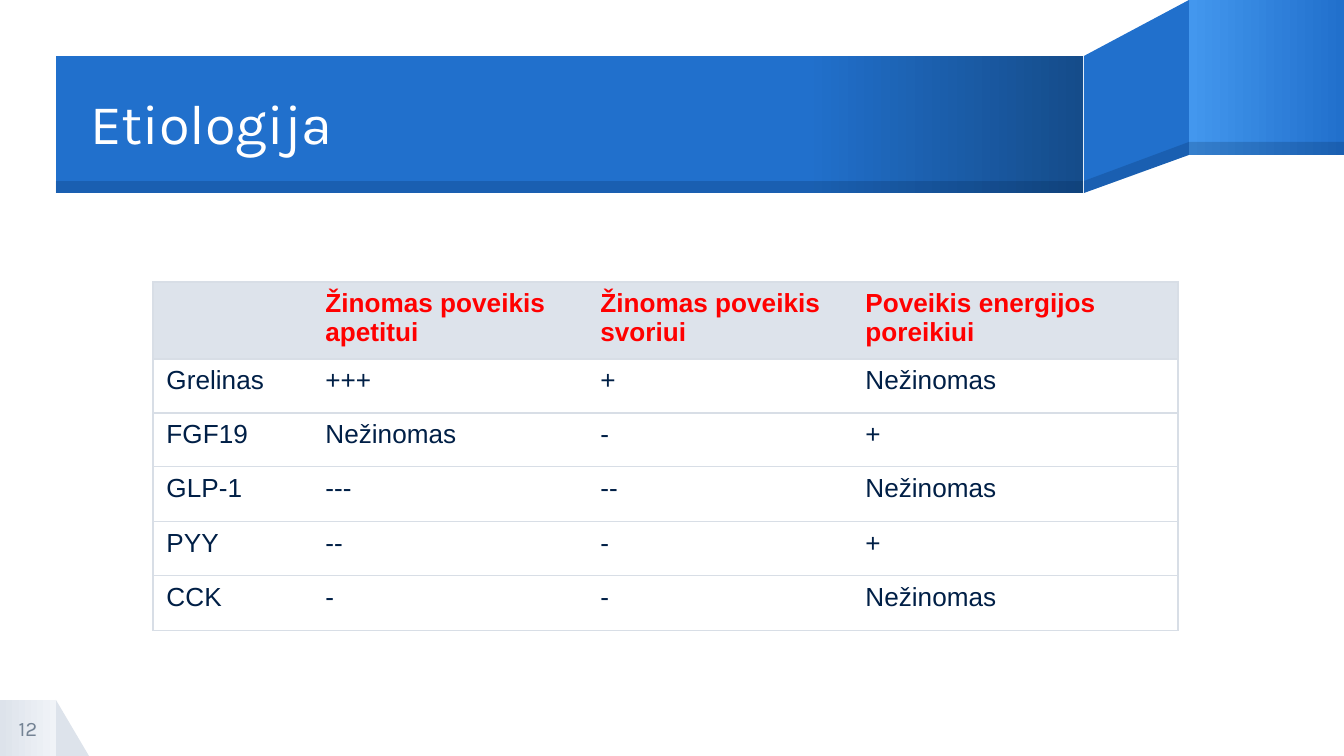
import pptx
import pptx.dml.color
import pptx.enum.shapes
import pptx.enum.text
import pptx.oxml
import pptx.oxml.ns
import pptx.util

EMU_PER_PX = 914400 / 134.4
COLORS = {
    "blue": "2170CC", "light_blue": "4397EE", "dark_blue": "154C8A",
    "navy": "001F46", "mist": "DDE3EB", "pale": "F0F3F7", "border": "D8DEE6",
    "grey": "748394", "red": "FF0000", "white": "FFFFFF",
}
SHAPES = pptx.enum.shapes.MSO_SHAPE
ALIGN = pptx.enum.text.PP_ALIGN
MIDDLE = pptx.enum.text.MSO_ANCHOR.MIDDLE
NAMESPACE = pptx.oxml.ns.nsdecls("a")


def px(length):
    return pptx.util.Emu(round(length * EMU_PER_PX))


def rgb(name):
    return pptx.dml.color.RGBColor.from_string(COLORS[name])


class SlideBuilder:
    def __init__(self, slide):
        self.slide = slide

    def paint(self, shape, fill, alpha=None):
        """Fill with a colour name, or with a list of (percent, colour name) stops."""
        shape.shadow.inherit = False
        shape.line.fill.background()
        if isinstance(fill, list):
            shape.fill.gradient()
            shape.fill.gradient_angle = 0
            stop_list = shape.element.spPr.find(".//" + pptx.oxml.ns.qn("a:gsLst"))
            for stop in list(stop_list):
                stop_list.remove(stop)
            for percent, name in fill:
                stop_list.append(pptx.oxml.parse_xml(
                    f'<a:gs {NAMESPACE} pos="{percent * 1000}">'
                    f'<a:srgbClr val="{COLORS[name]}"/></a:gs>'))
            return
        shape.fill.solid()
        shape.fill.fore_color.rgb = rgb(fill)
        if alpha is not None:
            color = shape.element.spPr.find(".//" + pptx.oxml.ns.qn("a:srgbClr"))
            color.append(pptx.oxml.parse_xml(
                f'<a:alpha {NAMESPACE} val="{alpha * 1000}"/>'))

    def shape(self, kind, box, fill, alpha=None):
        shape = self.slide.shapes.add_shape(kind, *map(px, box))
        self.paint(shape, fill, alpha)

    def polygon(self, points, fill, alpha=None):
        outline = self.slide.shapes.build_freeform(*points[0], scale=EMU_PER_PX)
        outline.add_line_segments(points[1:], close=True)
        self.paint(outline.convert_to_shape(), fill, alpha)

    def set_text(self, frame, text, size, font, color, bold=False, **paragraph_format):
        paragraph = frame.paragraphs[0]
        paragraph.text = text
        for name, value in paragraph_format.items():
            setattr(paragraph, name, value)
        values = {"size": pptx.util.Pt(size), "name": font, "bold": bold}
        for name, value in values.items():
            setattr(paragraph.font, name, value)
        paragraph.font.color.rgb = rgb(color)

    def format_frame(self, frame):
        values = {"word_wrap": True, "vertical_anchor": MIDDLE,
                  "auto_size": pptx.enum.text.MSO_AUTO_SIZE.NONE,
                  "margin_left": 0, "margin_right": 0,
                  "margin_top": 0, "margin_bottom": 0}
        for name, value in values.items():
            setattr(frame, name, value)

    def title(self, box, text):
        title = self.slide.shapes.title
        for name, value in zip(("left", "top", "width", "height"), box):
            setattr(title, name, px(value))
        title.element.getparent().append(title.element)  # in front of the ribbon
        self.format_frame(title.text_frame)
        self.set_text(title.text_frame, text, 30, "Karla", "white",
                      alignment=ALIGN.LEFT, line_spacing=0.9)

    def text(self, box, text, size, color):
        frame = self.slide.shapes.add_textbox(*map(px, box)).text_frame
        self.format_frame(frame)
        self.set_text(frame, text, size, "Karla", color, alignment=ALIGN.CENTER)

    def border(self, cell, side, visible):
        fill = (f'<a:solidFill><a:srgbClr val="{COLORS["border"]}"/></a:solidFill>'
                if visible else "<a:noFill/>")
        cell._tc.get_or_add_tcPr().append(pptx.oxml.parse_xml(
            f'<a:ln{side} {NAMESPACE} w="9525">{fill}</a:ln{side}>'))

    def table(self, left, top, widths, heights, rows):
        frame = self.slide.shapes.add_table(
            len(rows), len(widths), px(left), px(top), px(sum(widths)), px(sum(heights)))
        table = frame.table
        table.first_row = table.horz_banding = False
        for column, width in zip(table.columns, widths):
            column.width = px(width)
        for row, height in zip(table.rows, heights):
            row.height = px(height)
        for row_index, row in enumerate(rows):
            header = row_index == 0
            for column_index, text in enumerate(row):
                cell = table.cell(row_index, column_index)
                self.border(cell, "L", column_index == 0)
                self.border(cell, "R", column_index == len(row) - 1)
                self.border(cell, "T", True)
                self.border(cell, "B", True)
                if header:
                    cell.fill.solid()
                    cell.fill.fore_color.rgb = rgb("mist")
                else:
                    cell.fill.background()
                self.set_text(cell.text_frame, text, 14, "Arial",
                              "red" if header else "navy", bold=header)


def main():
    presentation = pptx.Presentation()
    presentation.slide_width, presentation.slide_height = px(1344), px(756)
    slide = presentation.slides.add_slide(presentation.slide_layouts[5])
    builder = SlideBuilder(slide)

    number_box = (0, 700, 56, 56)
    builder.shape(SHAPES.RIGHT_TRIANGLE, (56, 700, 33, 56), "mist")
    builder.shape(SHAPES.RECTANGLE, number_box, [(0, "mist"), (100, "pale")])

    builder.polygon([(1189, 0), (1084, 56), (1084, 193), (1189, 155)], "blue")
    builder.shape(SHAPES.RECTANGLE, (1189, 0, 155, 155),
                  [(0, "light_blue"), (100, "blue")])
    builder.shape(SHAPES.RECTANGLE, (56, 56, 1027, 137),
                  [(0, "blue"), (73, "blue"), (100, "dark_blue")])
    builder.polygon([(1189, 142), (1084, 181), (1084, 193), (1189, 155)], "navy", 20)
    for shade in ((1189, 142, 155, 13), (56, 181, 1027, 12)):
        builder.shape(SHAPES.RECTANGLE, shade, "navy", 20)

    builder.title((90, 58, 993, 136), "Etiologija")
    builder.text(number_box, "12", 11, "grey")
    builder.table(153, 282, [159, 275, 265, 326], [77, 54, 54, 55, 54, 55], [
        ["", "Žinomas poveikis apetitui", "Žinomas poveikis svoriui",
         "Poveikis energijos poreikiui"],
        ["Grelinas", "+++", "+", "Nežinomas"],
        ["FGF19", "Nežinomas", "-", "+"],
        ["GLP-1", "---", "--", "Nežinomas"],
        ["PYY", "--", "-", "+"],
        ["CCK", "-", "-", "Nežinomas"],
    ])
    presentation.save("out.pptx")


if __name__ == "__main__":
    main()
